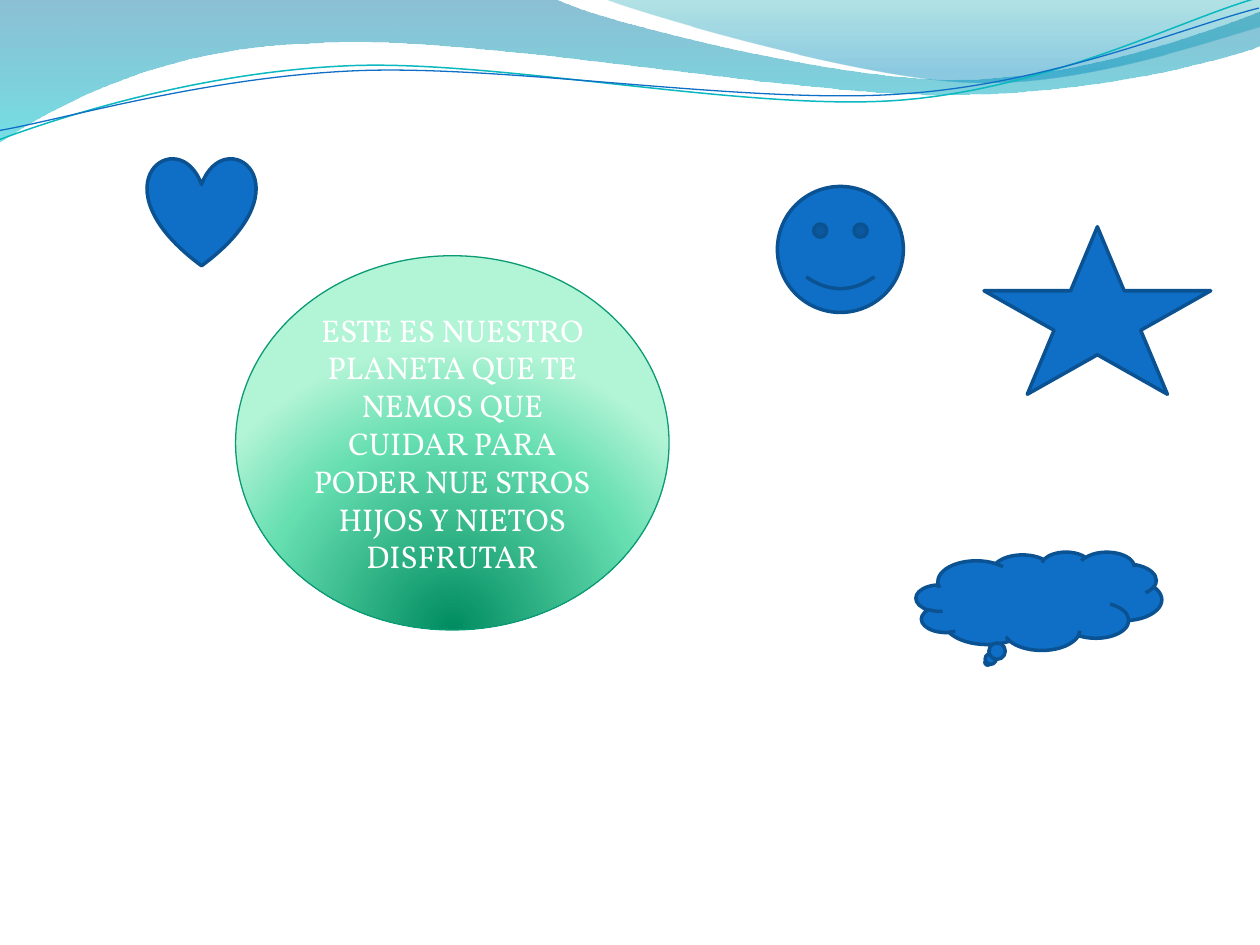
import math
from lxml import etree
from pptx import Presentation
from pptx.dml.color import RGBColor as Rgb
from pptx.enum import shapes as sh, text as tx
from pptx.oxml import ns
from pptx.util import Inches, Pt

HUES = {
    "blue": "0F6FC6", "navy": "0B5292", "teal": "0AB8BF", "rim": "0A9B74",
    "white": "FFFFFF", "sea": "0074A1", "aqua": "00C6CF", "lagoon": "00A1A9",
    "sky": "008BBF", "pine": "008C60", "mint": "65DEB0", "pale": "B2F4D6",
}


def blend(shape, stops, **rect):
    shape.fill.gradient()
    grad = shape._element.spPr.find(ns.qn("a:gradFill"))
    for kid in list(grad):
        grad.remove(kid)
    row = etree.SubElement(grad, ns.qn("a:gsLst"))
    for pos, hue, alpha in stops:
        stop = etree.SubElement(row, ns.qn("a:gs"), pos=str(pos * 1000))
        tint = etree.SubElement(stop, ns.qn("a:srgbClr"), val=HUES[hue])
        if alpha < 100:
            etree.SubElement(tint, ns.qn("a:alpha"), val=str(alpha * 1000))
    if rect:
        ring = etree.SubElement(grad, ns.qn("a:path"), path="circle")
        sides = {key: str(val * 1000) for key, val in rect.items()}
        etree.SubElement(ring, ns.qn("a:fillToRect"), sides)
    else:
        etree.SubElement(grad, ns.qn("a:lin"), ang="5400000", scaled="0")


def trace(start, parts, close, mid=(0, 0), turn=0):
    cos, sin = math.cos(math.radians(turn)), math.sin(math.radians(turn))
    pts = [start]
    for part in parts:
        pts += zip(part[::2], part[1::2])
    spots = []
    for x, y in pts:
        dx, dy = x - mid[0], y - mid[1]
        spots.append((Inches(mid[0] + dx * cos - dy * sin),
                      Inches(mid[1] + dx * sin + dy * cos)))
    pen = slide.shapes.build_freeform(*spots[0], scale=1.0)
    pen.add_line_segments(spots[1:], close=close)
    shape = pen.convert_to_shape()
    shape.shadow.inherit = False
    shape.rotation = -turn
    legs = iter(list(shape._element.spPr.iter(ns.qn("a:lnTo"))))
    for part in parts:
        leg = next(legs)
        if len(part) == 6:
            bend = etree.Element(ns.qn("a:cubicBezTo"))
            leg.addprevious(bend)
            for old in (leg, next(legs), next(legs)):
                bend.append(old[0])
                old.getparent().remove(old)
    return shape


deck = Presentation()
deck.slide_width, deck.slide_height = Inches(10), Inches(7.5)
slide = deck.slides.add_slide(deck.slide_layouts[6])

waves = [
    ((0, 0), [(4.4, -0.01), (4.76, 0.17, 6.64, 0.63, 7.58, 0.63),
              (8.53, 0.63, 9.58, 0.26, 10, 0.09), (10.01, 0.36),
              (9.83, 0.44, 8.7, 0.76, 7.46, 0.75),
              (6.22, 0.75, 3.82, 0.28, 2.57, 0.34),
              (1.29, 0.36, 0.46, 0.83, -0.01, 1.13)],
     [(0, "sea", 45), (100, "aqua", 55)]),
    ((4.79, -0.01), [(5.09, 0.11, 6.82, 0.62, 7.69, 0.65),
                     (8.56, 0.69, 9.61, 0.32, 10, 0.21), (10, 0)],
     [(0, "lagoon", 30), (80, "sky", 45)]),
]
for start, parts, stops in waves:
    wave = trace(start, parts, True)
    blend(wave, stops)
    wave.line.fill.background()

curves = [
    ((0, 1.11), [(0.48, 0.93, 1.58, 0.57, 2.77, 0.52),
                 (3.95, 0.47, 5.93, 0.89, 7.13, 0.8),
                 (8.33, 0.71, 9.38, 0.15, 9.98, -0.02)],
     (-0.02, 0.22, 10.02, 0.71), "teal", 0.85),
    ((0, 1.04), [(0.47, 0.96, 1.64, 0.61, 2.83, 0.56),
                 (4.03, 0.51, 5.97, 0.84, 7.17, 0.75),
                 (8.36, 0.67, 9.41, 0.21, 10, 0.06)],
     (-0.02, 0.3, 10.03, 0.58), "blue", 0.75),
]
for start, parts, box, hue, width in curves:
    mid = (box[0] + box[2] / 2, box[1] + box[3] / 2)
    curve = trace(start, parts, False, mid, 2.7)
    curve.left, curve.top, curve.width, curve.height = map(Inches, box)
    curve.fill.background()
    curve.line.color.rgb = Rgb.from_string(HUES[hue])
    curve.line.width = Pt(width)

kinds = sh.MSO_SHAPE
globe = slide.shapes.add_shape(kinds.OVAL, Inches(1.87), Inches(2.03), Inches(3.44), Inches(2.97))
blend(globe, [(0, "pine", 100), (68, "mint", 100), (100, "pale", 100)], l=50, t=130, r=50, b=-30)
globe.line.color.rgb = Rgb.from_string(HUES["rim"])
globe.line.width = Pt(0.75)
globe.shadow.inherit = False

frame = globe.text_frame
frame.text = ("ESTE ES NUESTRO PLANETA QUE TE NEMOS QUE CUIDAR "
              "PARA PODER NUE STROS HIJOS Y NIETOS DISFRUTAR")
frame.word_wrap = True
frame.vertical_anchor = tx.MSO_ANCHOR.MIDDLE
para = frame.paragraphs[0]
para.alignment = tx.PP_ALIGN.CENTER
font = para.runs[0].font
font.name, font.size = "Vollkorn", Pt(18)
font.color.rgb = Rgb.from_string(HUES["white"])

icons = [
    (kinds.STAR_5_POINT, 7.81, 1.8, 1.8, 1.33),
    (kinds.CLOUD_CALLOUT, 7.27, 4.38, 1.95, 0.78),
    (kinds.HEART, 1.17, 1.25, 0.86, 0.86),
    (kinds.SMILEY_FACE, 6.17, 1.48, 1, 1),
]
for kind, *box in icons:
    icon = slide.shapes.add_shape(kind, *map(Inches, box))
    icon.shadow.inherit = False
    icon.fill.solid()
    icon.fill.fore_color.rgb = Rgb.from_string(HUES["blue"])
    icon.line.color.rgb = Rgb.from_string(HUES["navy"])
    icon.line.width = Pt(2)

deck.save("out.pptx")
